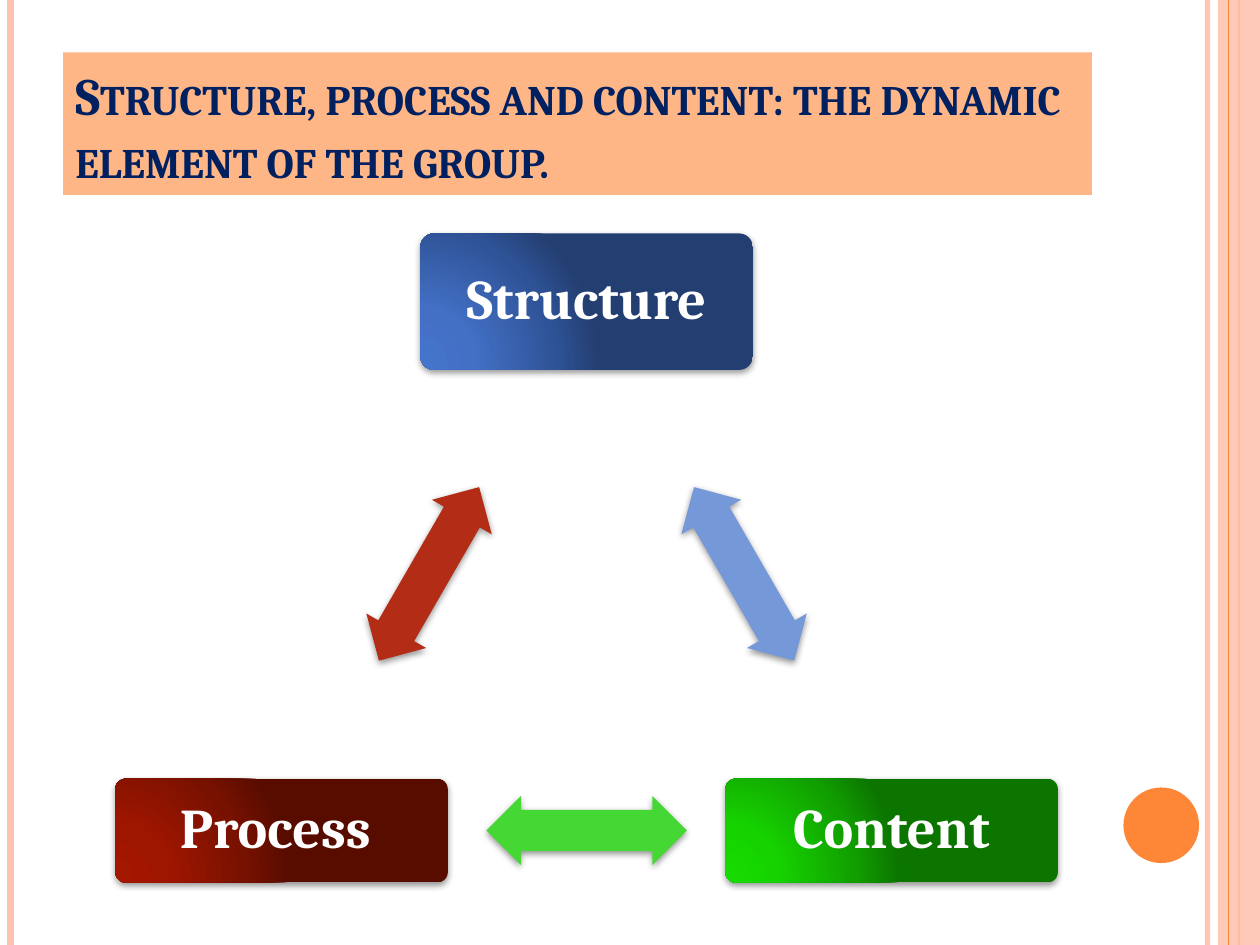
from dataclasses import dataclass
from typing import Any

from lxml.etree import SubElement
from pptx import Presentation
from pptx.dml.color import RGBColor
from pptx.enum.shapes import MSO_CONNECTOR as Connector, MSO_SHAPE as Shape
from pptx.enum.text import MSO_ANCHOR as Anchor, PP_ALIGN as Align
from pptx.oxml.ns import qn
from pptx.util import Pt

WHITE = RGBColor(0xFF, 0xFF, 0xFF)
NAVY = RGBColor(0x00, 0x20, 0x60)
ORANGE = RGBColor(0xFE, 0x86, 0x37)
PEACH = RGBColor(0xFE, 0xB6, 0x87)
PINK = RGBColor(0xFE, 0xC3, 0xAE)
LIGHT_BLUE = RGBColor(0x75, 0x98, 0xD9)
GREEN = RGBColor(0x45, 0xD8, 0x34)
RED = RGBColor(0xB3, 0x2C, 0x16)
STOPS = (0, 30, 75, 100)
BLUES = [RGBColor.from_string(c) for c in ("4574CC", "4370C5", "2F5397", "233E70")]
GREENS = [RGBColor.from_string(c) for c in ("17DB00", "16D300", "119E00", "0C7500")]
REDS = [RGBColor.from_string(c) for c in ("A41700", "9F1600", "771100", "580C00")]


def add_alpha(parent, percent):
    """Make every colour under the element partly transparent."""
    for color in parent.iter(qn("a:srgbClr")):
        SubElement(color, qn("a:alpha"), val=str(percent * 1000))


@dataclass
class SlideBuilder:
    """Draws styled elements on the current slide."""

    slide: Any
    font: str = "Cambria"
    width: float = 720
    height: float = 540

    def shape(self, kind, left, top, width, height, color=None):
        shape = self.slide.shapes.add_shape(kind, Pt(left), Pt(top), Pt(width), Pt(height))
        shape.shadow.inherit = False
        shape.line.fill.background()
        if color is not None:
            shape.fill.solid()
            shape.fill.fore_color.rgb = color
        return shape

    def rule(self, x, color, weight, opacity=100):
        line = self.slide.shapes.add_connector(Connector.STRAIGHT, Pt(x), Pt(0), Pt(x), Pt(self.height))
        line.line.color.rgb = color
        line.line.width = Pt(weight)
        properties = line._element.spPr
        if opacity < 100:
            add_alpha(properties, opacity)
        SubElement(properties, qn("a:effectLst"))

    def band(self, left, width, color, opacity):
        shape = self.shape(Shape.RECTANGLE, left, 0, width, self.height, color)
        add_alpha(shape._element.spPr, opacity)

    def text(self, shape, text, size, color, align, anchor):
        frame = shape.text_frame
        frame.word_wrap = True
        frame.vertical_anchor = anchor
        paragraph = frame.paragraphs[0]
        paragraph.text = text
        paragraph.alignment = align
        font = paragraph.font
        font.name, font.size, font.bold = self.font, Pt(size), True
        font.color.rgb = color
        return paragraph

    def title(self, text, left, top, width, height):
        shape = self.shape(Shape.RECTANGLE, left, top, width, height, PEACH)
        paragraph = self.text(shape, text, 30, NAVY, Align.LEFT, Anchor.BOTTOM)
        paragraph.runs[0].font._element.set("cap", "small")

    def drop_shadow(self, shape):
        effects = shape._element.spPr.find(qn("a:effectLst"))
        shadow = SubElement(effects, qn("a:outerShdw"), blurRad=str(Pt(4)), dist=str(Pt(1.6)),
                            dir="5400000", rotWithShape="0")
        SubElement(shadow, qn("a:srgbClr"), val="000000")
        add_alpha(shadow, 42)

    def radial_fill(self, shape, colors):
        shape.fill.gradient()
        gradient = shape._element.spPr.find(qn("a:gradFill"))
        for child in list(gradient):
            gradient.remove(child)
        stops = SubElement(gradient, qn("a:gsLst"))
        for position, color in zip(STOPS, colors):
            stop = SubElement(stops, qn("a:gs"), pos=str(position * 1000))
            SubElement(stop, qn("a:srgbClr"), val=str(color))
        circle = SubElement(gradient, qn("a:path"), path="circle")
        SubElement(circle, qn("a:fillToRect"), l="5000", t="100000", r="120000", b="10000")

    def node(self, text, center_x, top, height, colors, width=190):
        shape = self.shape(Shape.ROUNDED_RECTANGLE, center_x - width / 2, top, width, height)
        shape.adjustments[0] = 0.1
        self.radial_fill(shape, colors)
        self.drop_shadow(shape)
        paragraph = self.text(shape, text, 32, WHITE, Align.CENTER, Anchor.MIDDLE)
        paragraph.line_spacing = 0.9

    def arrow(self, center_x, top, rotation, color, width=114.5, height=39.5):
        shape = self.shape(Shape.LEFT_RIGHT_ARROW, center_x - width / 2, top, width, height, color)
        shape.adjustments[0] = 0.6
        shape.adjustments[1] = 0.5
        shape.rotation = rotation
        self.drop_shadow(shape)


def main():
    """Build the slide and save it."""
    presentation = Presentation()
    presentation.slide_width, presentation.slide_height = Pt(720), Pt(540)
    builder = SlideBuilder(presentation.slides.add_slide(presentation.slide_layouts[6]))

    builder.rule(690, PINK, 3, 93)
    builder.rule(6, PINK, 4.5)
    builder.rule(708, ORANGE, 1.5)
    builder.band(696, 24, PINK, 87)
    builder.rule(702, ORANGE, 0.75)
    builder.shape(Shape.OVAL, 642, 450, 43.2, 43.2, ORANGE)
    builder.title("Structure, process and content: the dynamic element of the group.", 36, 30, 588, 81.4)

    center, node_offset, arrow_offset = 335.2, 174.3, 90
    builder.node("Structure", center, 133.4, 78, BLUES)
    builder.arrow(center + arrow_offset, 308.2, 60, LIGHT_BLUE)
    builder.node("Content", center + node_offset, 445, 59.3, GREENS)
    builder.arrow(center, 454.8, 180, GREEN)
    builder.node("Process ", center - node_offset, 445, 59.3, REDS)
    builder.arrow(center - arrow_offset, 308.2, 300, RED)

    presentation.save("out.pptx")


if __name__ == "__main__":
    main()
